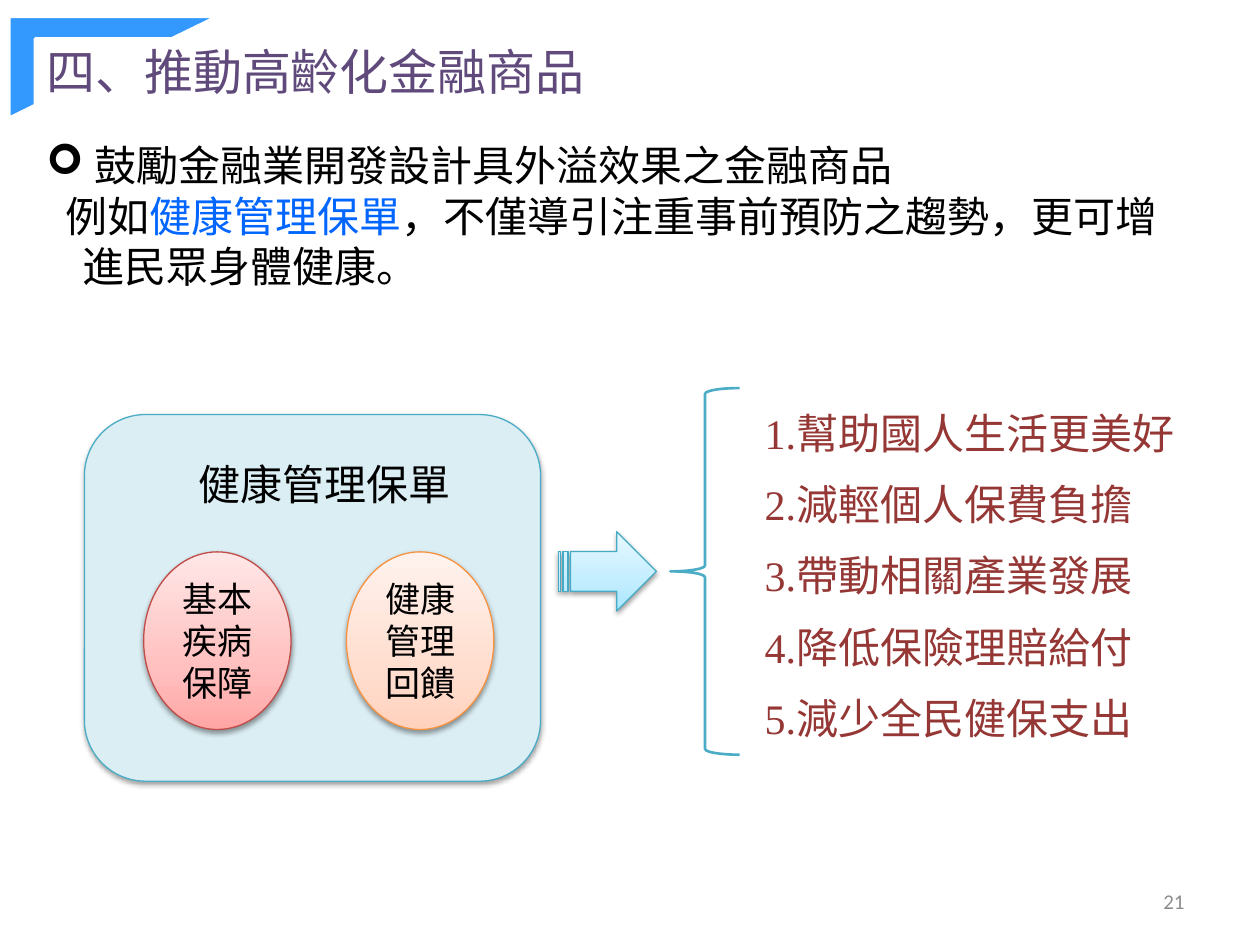
from copy import deepcopy

from lxml.etree import SubElement
from pptx import Presentation
from pptx.dml.color import RGBColor
from pptx.enum.shapes import MSO_SHAPE
from pptx.enum.text import MSO_ANCHOR, PP_ALIGN
from pptx.oxml.ns import qn
from pptx.util import Inches, Pt

COLORS = {
    "title": "604A7B", "text": "000000", "highlight": "0066FF",
    "benefit": "953735", "number": "8C8C8C",
    "corner": "3399FF", "white": "FFFFFF",
    "panel": "DBEEF4", "teal": "4BACC6",
    "red": "BF4C48", "orange": "F69240", "arrow": "46AAC5",
}
GRADIENTS = {
    "red": ("FFA6A5", "FFC0BF", "FFE7E7"),
    "orange": ("FFD2BD", "FFDED0", "FFF2ED"),
    "arrow": ("A7E6FF", "C1EDFF", "E7F8FF"),
}
STOPS = (0, 0.35, 1)
CJK = "Noto Sans CJK SC"


class SlideBuilder:
    def __init__(self, deck):
        self.page = deck.slides.add_slide(deck.slide_layouts[6])

    def style(self, span, size, color, font=CJK):
        span.font.size = Pt(size)
        span.font.color.rgb = RGBColor.from_string(COLORS[color])
        span.font.name = font
        SubElement(span.font._element, qn("a:ea"), typeface=CJK)

    def text(self, at, paragraphs, size, font=CJK, align=PP_ALIGN.JUSTIFY,
             anchor=MSO_ANCHOR.MIDDLE, gap=0):
        """Add a text box; each paragraph is a list of (wording, color) spans."""
        box = self.page.shapes.add_textbox(*map(Inches, at))
        frame = box.text_frame
        frame.word_wrap = True
        frame.vertical_anchor = anchor
        for index, spans in enumerate(paragraphs):
            paragraph = frame.add_paragraph() if index else frame.paragraphs[0]
            paragraph.alignment = align
            if gap:
                paragraph.space_before = Pt(gap if index else 0)
                paragraph.space_after = Pt(gap)
            for wording, color in spans:
                span = paragraph.add_run()
                span.text = wording
                self.style(span, size, color, font)
        return frame

    def indent(self, paragraph, left, first=0, bullet=None):
        properties = paragraph._p.get_or_add_pPr()
        properties.set("marL", str(Inches(left)))
        properties.set("indent", str(Inches(first)))
        if bullet:
            SubElement(properties, qn("a:buFont"), typeface="Wingdings")
            SubElement(properties, qn("a:buChar"), char=bullet)

    def shape(self, kind, at, line, width=0.75, fill=None, gradient=None, shadow=False):
        shape = self.page.shapes.add_shape(kind, *map(Inches, at))
        shape.shadow.inherit = False
        shape.line.color.rgb = RGBColor.from_string(COLORS[line])
        shape.line.width = Pt(width)
        if gradient:
            self.gradient(shape.fill, GRADIENTS[gradient])
        elif fill:
            shape.fill.solid()
            shape.fill.fore_color.rgb = RGBColor.from_string(COLORS[fill])
        else:
            shape.fill.background()
        if shadow:
            self.drop_shadow(shape)
        return shape

    def gradient(self, fill, colors):
        """Blend three colors from the bottom upwards."""
        fill.gradient()
        fill.gradient_angle = 90
        first = fill.gradient_stops[0]._gs
        first.addnext(deepcopy(first))
        for stop, position, color in zip(fill.gradient_stops, STOPS, colors):
            stop.position = position
            stop.color.rgb = RGBColor.from_string(color)

    def drop_shadow(self, shape):
        effects = shape._element.spPr.find(qn("a:effectLst"))
        outer = SubElement(effects, qn("a:outerShdw"), blurRad=str(Pt(3.1)),
                           dist=str(Pt(1.6)), dir="5400000", rotWithShape="0")
        color = SubElement(outer, qn("a:srgbClr"), val="000000")
        SubElement(color, qn("a:alpha"), val="38000")

    def oval(self, left, wording, color):
        oval = self.shape(MSO_SHAPE.FLOWCHART_CONNECTOR, (left, 4.38, 1.17, 1.41),
                          color, gradient=color, shadow=True)
        frame = oval.text_frame
        frame.text = wording
        frame.word_wrap = True
        frame.vertical_anchor = MSO_ANCHOR.MIDDLE
        frame.paragraphs[0].alignment = PP_ALIGN.CENTER
        self.style(frame.paragraphs[0].runs[0], 20, "text")


def main():
    deck = Presentation()
    deck.slide_width, deck.slide_height = Inches(10), Inches(7.5)
    slide = SlideBuilder(deck)

    slide.shape(MSO_SHAPE.ROUNDED_RECTANGLE, (0.67, 3.29, 3.62, 2.91), "teal",
                fill="panel", shadow=True)
    corner = slide.shape(MSO_SHAPE.HALF_FRAME, (0.07, 0.13, 1.66, 0.81), "white",
                         width=2, fill="corner")
    corner.adjustments[0], corner.adjustments[1] = 0.22, 0.26

    slide.text((0.27, 0.28, 4.96, 0.57), [[("四、推動高齡化金融商品", "title")]], 28,
               align=PP_ALIGN.LEFT, anchor=MSO_ANCHOR.TOP)
    slide.text((7.17, 6.95, 2.33, 0.4), [[("21", "number")]], 12,
               font="Calibri", align=PP_ALIGN.RIGHT)

    slide.oval(1.14, "基本疾病保障", "red")
    slide.oval(2.75, "健康管理回饋", "orange")
    slide.shape(MSO_SHAPE.STRIPED_RIGHT_ARROW, (4.43, 4.22, 0.78, 0.63), "arrow",
                gradient="arrow", shadow=True)
    slide.shape(MSO_SHAPE.LEFT_BRACE, (5.32, 3.08, 0.55, 2.91), "teal", width=1.5)

    benefits = ("幫助國人生活更美好", "減輕個人保費負擔", "帶動相關產業發展",
                "降低保險理賠給付", "減少全民健保支出")
    slide.text((5.97, 3.08, 3.48, 2.97),
               [[(f"{number}.{benefit}", "benefit")]
                for number, benefit in enumerate(benefits, 1)],
               24, font="Times New Roman", gap=6)

    intro = slide.text((0.27, 1.01, 9.23, 1.4), [
        [("鼓勵金融業開發設計具外溢效果之金融商品", "text")],
        [("例如", "text"), ("健康管理保單", "highlight"),
         ("，不僅導引注重事前預防之趨勢，更可增", "text")],
        [("進民眾身體健康。", "text")],
    ], 24)
    heading, example, ending = intro.paragraphs
    slide.indent(heading, 0.38, -0.38, bullet="➢")
    slide.indent(example, 0.15)
    slide.indent(ending, 0.29)

    slide.text((1.48, 3.56, 2.24, 0.55), [[("健康管理保單", "text")]], 24)
    deck.save("out.pptx")


if __name__ == "__main__":
    main()
